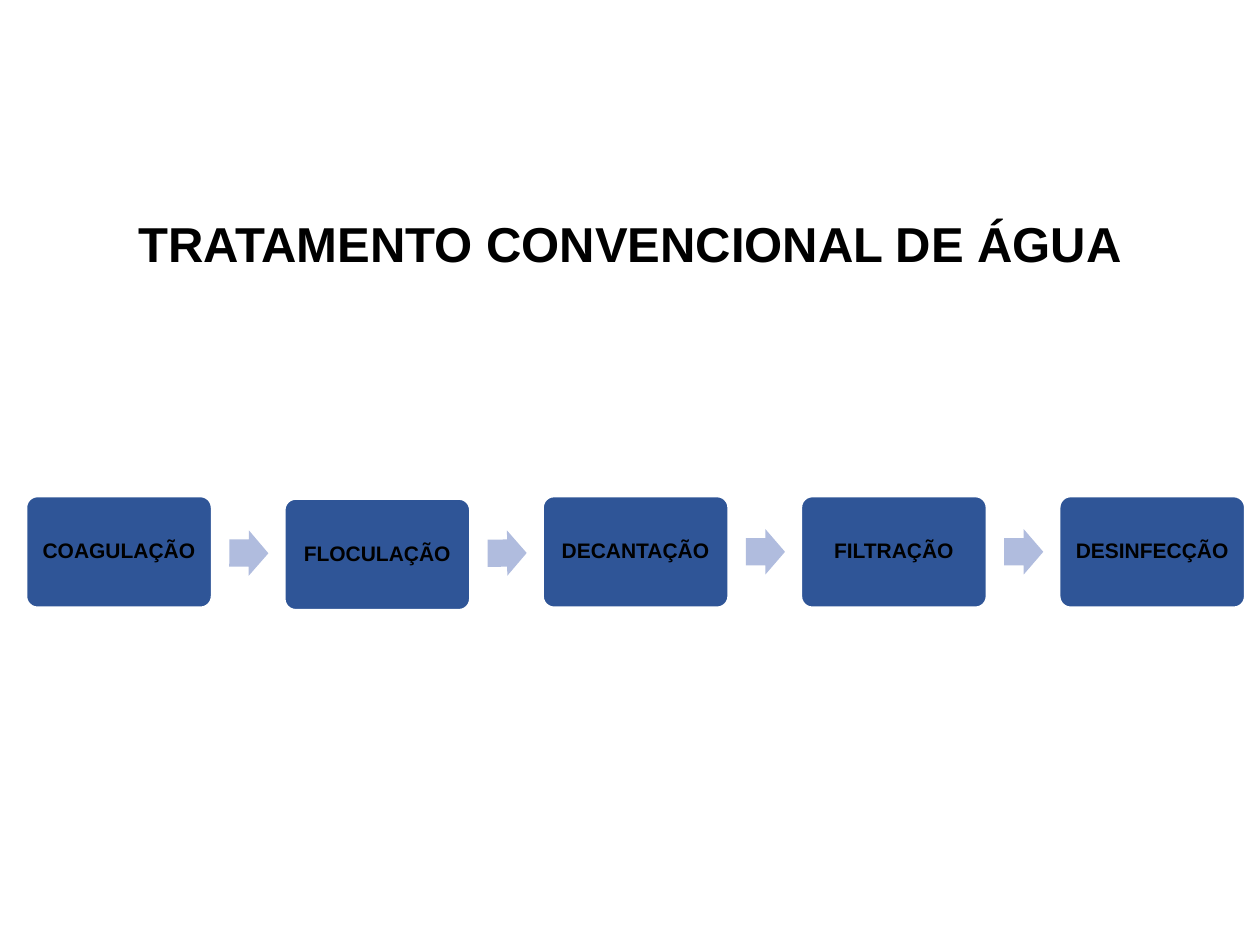
from pptx import Presentation
from pptx.dml.color import RGBColor
from pptx.enum.shapes import MSO_SHAPE
from pptx.enum.text import MSO_ANCHOR, PP_ALIGN
from pptx.util import Inches, Pt

TITLE = "TRATAMENTO CONVENCIONAL DE ÁGUA"
STAGES = [
    ("COAGULAÇÃO", 3.94),
    ("FLOCULAÇÃO", 3.96),
    ("DECANTAÇÃO", 3.94),
    ("FILTRAÇÃO", 3.94),
    ("DESINFECÇÃO", 3.94),
]
ARROWS = [(4.21, 0.4), (4.21, -0.4), (4.2, 0), (4.2, 0)]
FIRST_LEFT, STEP = 0.21, 2.05
BOX_WIDTH, BOX_HEIGHT = 1.47, 0.88
ARROW_OFFSET, ARROW_WIDTH, ARROW_HEIGHT = 1.61, 0.31, 0.36
BLACK, WHITE, BLUE, PALE_BLUE = "000000", "FFFFFF", "2F5597", "B0BCDE"


def set_values(target, values):
    for name, value in values.items():
        setattr(target, name, value)


def color(hex_value):
    return RGBColor.from_string(hex_value)


def write_text(shape, text, size, insets):
    frame = shape.text_frame
    frame.text = text
    names = ("margin_left", "margin_top", "margin_right", "margin_bottom")
    set_values(frame, dict(zip(names, map(Inches, insets))))
    set_values(frame, {"word_wrap": True, "vertical_anchor": MSO_ANCHOR.MIDDLE})
    paragraph = frame.paragraphs[0]
    set_values(paragraph, {"alignment": PP_ALIGN.CENTER, "line_spacing": 0.9})
    font = paragraph.runs[0].font
    set_values(font, {"name": "Arial", "size": Pt(size), "bold": True})
    font.color.rgb = color(BLACK)


def add_shape(slide, kind, bounds, fill, adjustments):
    shape = slide.shapes.add_shape(kind, *map(Inches, bounds))
    shape.shadow.inherit = False
    shape.fill.solid()
    shape.fill.fore_color.rgb = color(fill)
    for index, value in enumerate(adjustments):
        shape.adjustments[index] = value
    return shape


def main():
    presentation = Presentation()
    set_values(presentation, {"slide_width": Inches(10), "slide_height": Inches(7.5)})
    slide = presentation.slides.add_slide(presentation.slide_layouts[5])

    title = slide.shapes.title
    set_values(title, {"left": Inches(0), "top": Inches(1.4),
                       "width": Inches(10), "height": Inches(1.54)})
    write_text(title, TITLE, 28, (0.1, 0.05, 0.1, 0.47))

    for index, (label, top) in enumerate(STAGES):
        left = FIRST_LEFT + index * STEP
        box = add_shape(slide, MSO_SHAPE.ROUNDED_RECTANGLE,
                        (left, top, BOX_WIDTH, BOX_HEIGHT), BLUE, [0.1])
        box.line.color.rgb = color(WHITE)
        box.line.width = Pt(1)
        write_text(box, label, 12, (0.05,) * 4)
        if index < len(ARROWS):
            arrow_top, rotation = ARROWS[index]
            arrow = add_shape(slide, MSO_SHAPE.RIGHT_ARROW,
                              (left + ARROW_OFFSET, arrow_top, ARROW_WIDTH, ARROW_HEIGHT),
                              PALE_BLUE, [0.6, 0.5])
            arrow.line.fill.background()
            arrow.rotation = rotation

    presentation.save("out.pptx")


if __name__ == "__main__":
    main()
